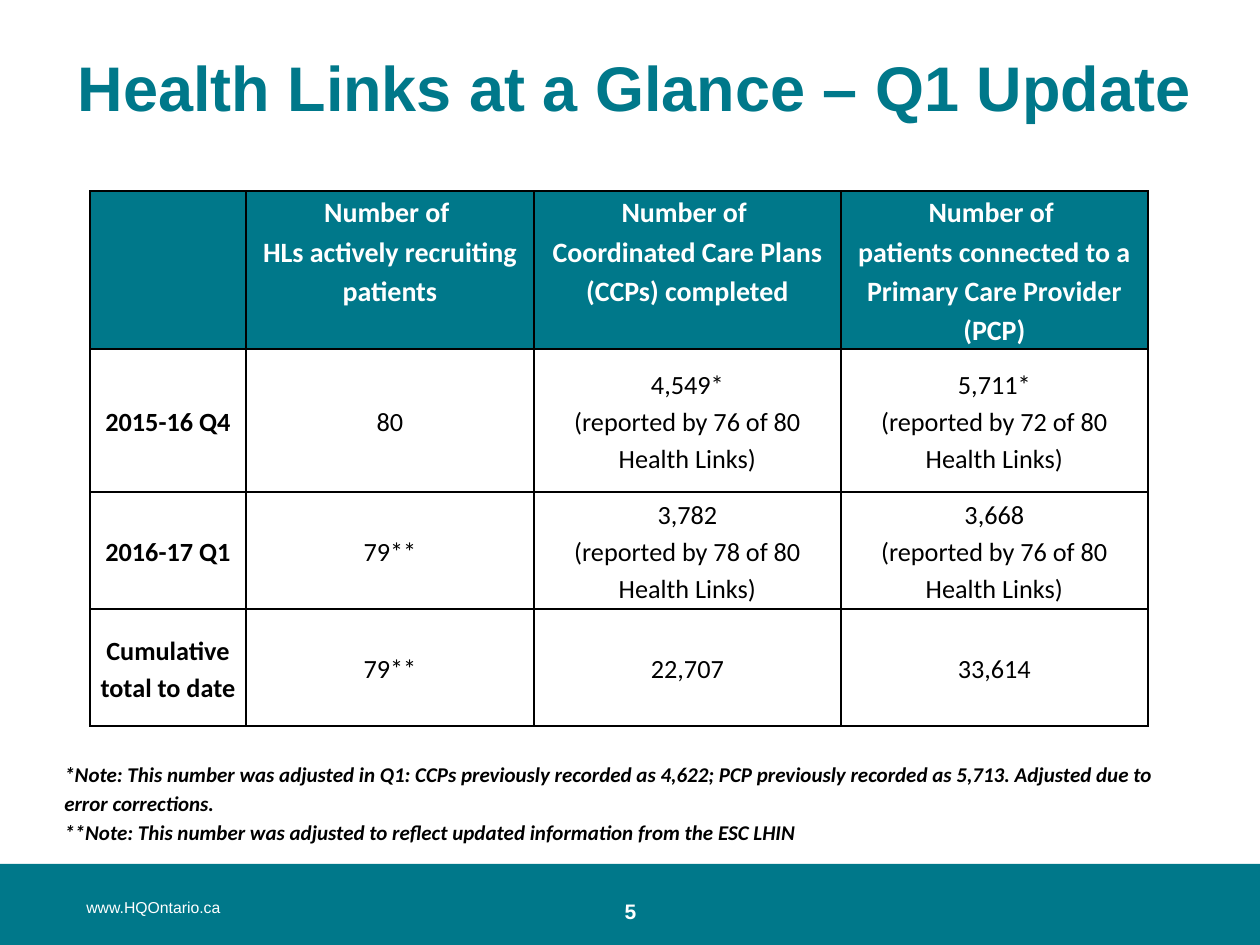
"""Build the Health Links quarterly update slide."""
from dataclasses import dataclass

from lxml.etree import SubElement as Sub
from pptx import Presentation
from pptx.dml.color import RGBColor as RGB
from pptx.enum.shapes import MSO_SHAPE as Shape
from pptx.enum.text import MSO_ANCHOR as Anchor
from pptx.enum.text import MSO_AUTO_SIZE as Fit
from pptx.enum.text import PP_ALIGN as Align
from pptx.oxml.ns import qn
from pptx.util import Emu, Pt

TITLE = "Health Links at a Glance – Q1 Update"
HEAD = [
    "",
    "Number of \nHLs actively recruiting patients",
    "Number of \nCoordinated Care Plans (CCPs) completed",
    "Number of \npatients connected to a\nPrimary Care Provider (PCP)",
]
BODY = [
    ["2015-16 Q4", "80", "4,549*\n(reported by 76 of 80 Health Links)",
     "5,711*\n(reported by 72 of 80 Health Links)"],
    ["2016-17 Q1", "79**", "3,782\n(reported by 78 of 80 Health Links)",
     "3,668\n(reported by 76 of 80 Health Links)"],
    ["Cumulative total to date", "79**", "22,707", "33,614"],
]
NOTES = (
    "*Note: This number was adjusted in Q1: CCPs previously recorded as 4,622; "
    "PCP previously recorded as 5,713. Adjusted due to error corrections.\n"
    "**Note: This number was adjusted to reflect updated information from the ESC LHIN"
)
SITE = "www.HQOntario.ca"
PAGE = "5"
COLS = [156, 288, 307, 307]
ROWS = [158, 143, 117, 117]


@dataclass(frozen=True)
class Theme:
    teal: RGB = RGB(0x00, 0x78, 0x8A)
    white: RGB = RGB(0xFF, 0xFF, 0xFF)
    black: RGB = RGB(0, 0, 0)
    sans: str = "Arial"
    text: str = "Calibri"
    title: int = 36
    head: int = 16
    body: int = 15
    note: int = 12
    site: int = 9
    lead: float = 1.15


T = Theme()


def px(n):
    return Emu(round(n * 914400 / 126))


def write(frame, text, face, size, color, bold=False, italic=False,
          align=Align.LEFT, lead=None):
    frame.text = text
    for para in frame.paragraphs:
        para.alignment = align
        para.line_spacing = lead
        font = para.font
        font.name, font.size, font.color.rgb = face, Pt(size), color
        font.bold, font.italic = bold, italic


def add_text(slide, box, text, *style, **more):
    frame = slide.shapes.add_textbox(*map(px, box)).text_frame
    frame.word_wrap = True
    write(frame, text, *style, **more)


def edge(cell):
    props = cell._tc.get_or_add_tcPr()
    for side in ("lnL", "lnR", "lnT", "lnB"):
        line = Sub(props, qn(f"a:{side}"), w=str(Pt(1)))
        fill = Sub(line, qn("a:solidFill"))
        Sub(fill, qn("a:srgbClr"), val=str(T.black))


def add_grid(slide):
    size = (sum(COLS), sum(ROWS))
    grid = slide.shapes.add_table(len(ROWS), len(COLS), px(90), px(191),
                                  *map(px, size)).table
    grid.first_row = grid.horz_banding = False
    for col, width in zip(grid.columns, COLS):
        col.width = px(width)
    for row, height in zip(grid.rows, ROWS):
        row.height = px(height)
    for r, line in enumerate([HEAD, *BODY]):
        for c, text in enumerate(line):
            cell, top = grid.cell(r, c), r == 0
            edge(cell)
            cell.margin_left = cell.margin_right = px(9)
            cell.margin_top = cell.margin_bottom = 0
            cell.vertical_anchor = Anchor.TOP if top else Anchor.MIDDLE
            if top:
                cell.fill.solid()
                cell.fill.fore_color.rgb = T.teal
            else:
                cell.fill.background()
            write(cell.text_frame, text, T.text, T.head if top else T.body,
                  T.white if top else T.black, bold=top or c == 0,
                  align=Align.CENTER, lead=T.lead)


def main():
    deck = Presentation()
    deck.slide_width, deck.slide_height = px(1260), px(945)
    slide = deck.slides.add_slide(deck.slide_layouts[5])

    bar = slide.shapes.add_shape(Shape.RECTANGLE, *map(px, (0, 864, 1265, 84)))
    bar.shadow.inherit = False
    bar.fill.solid()
    bar.fill.fore_color.rgb = T.teal
    bar.line.fill.background()

    title = slide.shapes.title
    title.left, title.top, title.width, title.height = map(px, (63, 38, 1143, 97))
    frame = title.text_frame
    frame.auto_size, frame.vertical_anchor = Fit.NONE, Anchor.MIDDLE
    write(frame, TITLE, T.sans, T.title, T.teal, bold=True, align=Align.CENTER)

    add_grid(slide)
    add_text(slide, (52, 752, 1120, 130), NOTES, T.text, T.note, T.black,
             bold=True, italic=True, lead=T.lead)
    add_text(slide, (74, 892, 388, 34), SITE, T.sans, T.site, T.white)
    add_text(slide, (557, 892, 147, 38), PAGE, T.sans, T.note, T.white,
             bold=True, align=Align.CENTER)
    deck.save("out.pptx")


if __name__ == "__main__":
    main()
